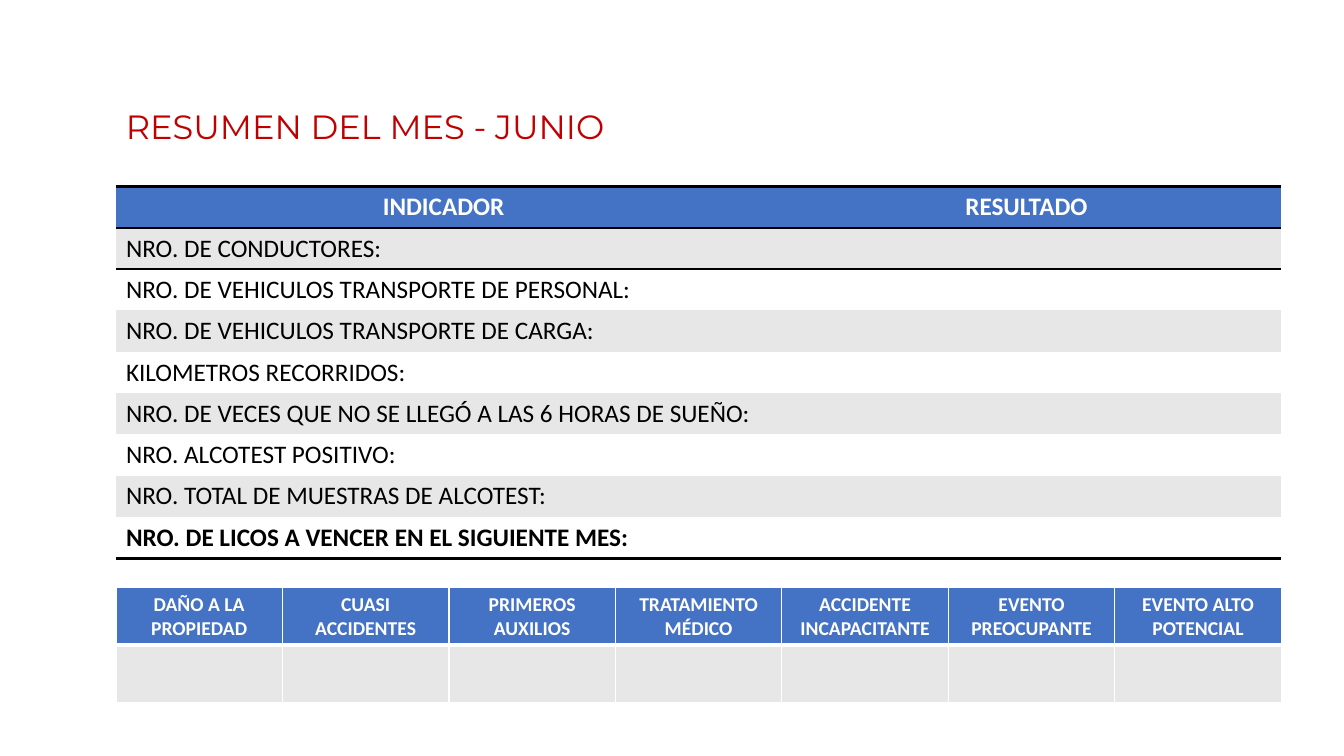
from lxml import etree
from pptx import Presentation
from pptx.dml.color import RGBColor
from pptx.enum.text import MSO_ANCHOR, PP_ALIGN
from pptx.oxml.ns import qn
from pptx.util import Inches, Pt

LEFT, CENTER = PP_ALIGN.LEFT, PP_ALIGN.CENTER
MIDDLE = MSO_ANCHOR.MIDDLE
NO_STYLE = "{2D5ABB26-0587-4C30-8999-92F81FD0307C}"
COLORS = {"title": "C00000", "header": "4472C4", "band": "E7E7E7",
          "white": "FFFFFF", "black": "000000"}

X, WIDTH = 1.15, 11.56
ROW_H = 0.41
INDICATOR_COLS = [6.5, 5.06]
EVENT_ROWS = [0.56, 0.57]

INDICATORS = [
    "NRO. DE CONDUCTORES:",
    "NRO. DE VEHICULOS TRANSPORTE DE PERSONAL:",
    "NRO. DE VEHICULOS TRANSPORTE DE CARGA:",
    "KILOMETROS RECORRIDOS:",
    "NRO. DE VECES QUE NO SE LLEGÓ A LAS 6 HORAS DE SUEÑO:",
    "NRO. ALCOTEST POSITIVO:",
    "NRO. TOTAL DE MUESTRAS DE ALCOTEST:",
    "NRO. DE LICOS A VENCER EN EL SIGUIENTE MES:",
]
EVENTS = ["DAÑO A LA PROPIEDAD", "CUASI ACCIDENTES", "PRIMEROS AUXILIOS",
          "TRATAMIENTO MÉDICO", "ACCIDENTE INCAPACITANTE",
          "EVENTO PREOCUPANTE", "EVENTO ALTO POTENCIAL"]


def write(tf, text, size=18, font="Calibri", color="black", bold=False, align=LEFT):
    p = tf.paragraphs[0]
    p.alignment = align
    p.font.size = Pt(size)
    if text:
        r = p.add_run()
        r.text = text
        r.font.size = Pt(size)
        r.font.name = font
        r.font.bold = bold
        r.font.color.rgb = RGBColor.from_string(COLORS[color])
    return p


def format_cell(cell, fill, borders):
    tcPr = cell._tc.get_or_add_tcPr()
    for side, (color, width) in borders.items():
        ln = etree.SubElement(tcPr, qn(f"a:ln{side}"), w=str(Pt(width)))
        solid = etree.SubElement(ln, qn("a:solidFill"))
        etree.SubElement(solid, qn("a:srgbClr"), val=COLORS[color])
    cell.fill.solid()
    cell.fill.fore_color.rgb = RGBColor.from_string(COLORS[fill])
    cell.vertical_anchor = MIDDLE


prs = Presentation()
prs.slide_width, prs.slide_height = Inches(13.33), Inches(7.5)
s = prs.slides.add_slide(prs.slide_layouts[6])

title = s.shapes.add_textbox(Inches(X), Inches(0.71), Inches(11.09), Inches(1.14))
tf = title.text_frame
tf.word_wrap = True
tf.vertical_anchor = MIDDLE
p = write(tf, "RESUMEN DEL MES - JUNIO", size=24, font="Montserrat", color="title")
p.line_spacing = 0.9

indicator_rows = [["INDICADOR", "RESULTADO"]] + [[name, ""] for name in INDICATORS]
event_rows = [EVENTS, [""] * len(EVENTS)]
last = len(INDICATORS)
rule = ("black", 2)
thin, thick = ("white", 1), ("white", 3)
grid = {"L": thin, "R": thin, "T": thin, "B": thin}

tables = [
    (1.85, indicator_rows, INDICATOR_COLS, [ROW_H] * len(indicator_rows), 18,
     {0: {"T": rule, "B": rule}, 1: {"T": rule}, last: {"B": rule}}),
    (5.83, event_rows, [WIDTH / len(EVENTS)] * len(EVENTS), EVENT_ROWS, 14,
     {0: {**grid, "B": thick}, 1: {**grid, "T": thick}}),
]

for top, rows, widths, heights, size, borders in tables:
    frame = s.shapes.add_table(len(rows), len(widths), Inches(X), Inches(top),
                               Inches(WIDTH), Inches(sum(heights)))
    table = frame.table
    next(frame.element.iter(qn("a:tableStyleId"))).text = NO_STYLE
    for column, width in zip(table.columns, widths):
        column.width = Inches(width)
    for i, (row, height) in enumerate(zip(rows, heights)):
        table.rows[i].height = Inches(height)
        header = i == 0
        fill = "header" if header else "band" if i % 2 else "white"
        for j, text in enumerate(row):
            cell = table.cell(i, j)
            format_cell(cell, fill, borders.get(i, {}))
            write(cell.text_frame, text, size=size,
                  color="white" if header else "black",
                  bold=header or i == last, align=CENTER if header else LEFT)

prs.save("out.pptx")
